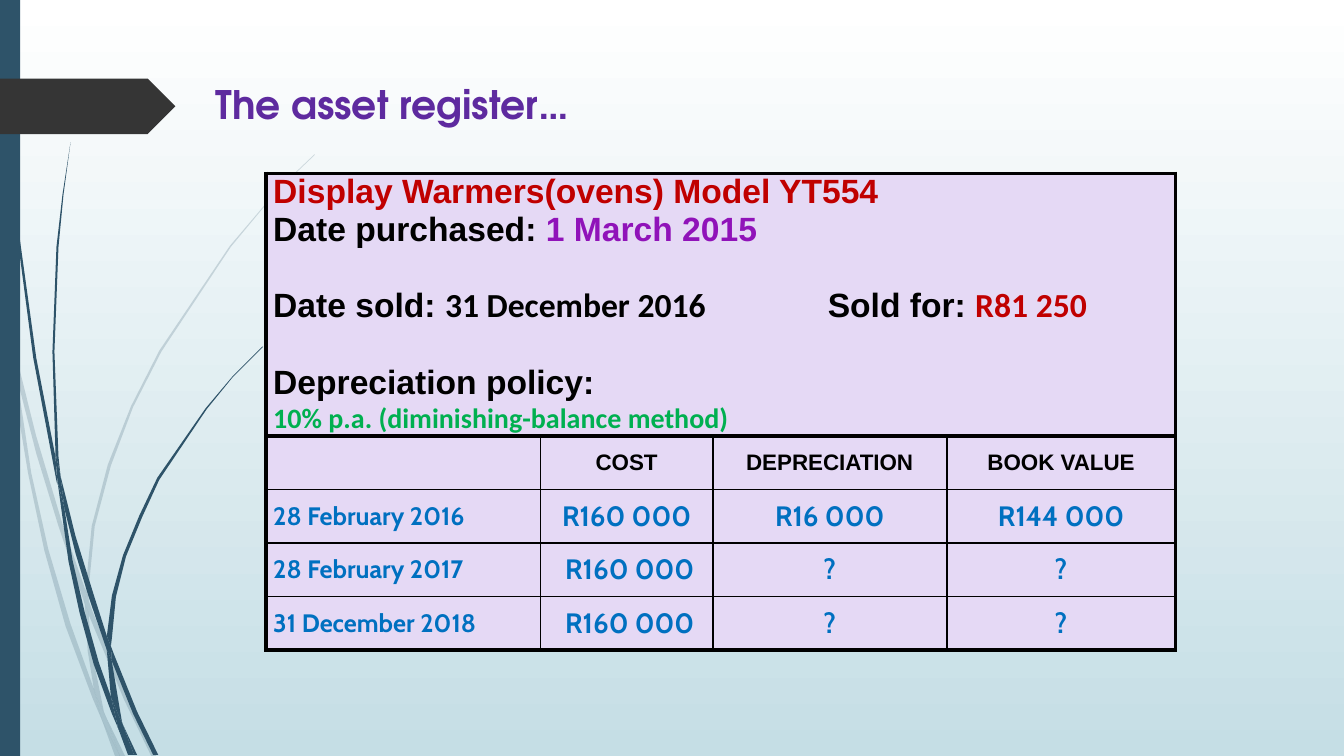
import lxml.etree
import pptx
import pptx.dml.color
import pptx.enum.shapes
import pptx.enum.text
import pptx.oxml.ns
import pptx.util

COLORS = {
    "navy": "2E5369", "charcoal": "353535", "sky": "C5DEE5", "white": "FFFFFF",
    "title": "5E2A9F", "lilac": "E5D9F5", "black": "000000", "red": "C00000",
    "purple": "9013B9", "green": "00B050", "blue": "0070C0",
}
RGB = {name: pptx.dml.color.RGBColor.from_string(value) for name, value in COLORS.items()}
ALIGN = pptx.enum.text.PP_ALIGN
SHAPE = pptx.enum.shapes.MSO_SHAPE

presentation = pptx.Presentation()
presentation.slide_width = pptx.util.Inches(13.33)
presentation.slide_height = pptx.util.Inches(7.5)
slide = presentation.slides.add_slide(presentation.slide_layouts[5])
# The slide is a grid of square units, 7.5 rows high
UNIT = presentation.slide_height / 7.5


def style_run(run, size, font, color):
    run.font.size = pptx.util.Pt(size)
    run.font.name = font
    run.font.bold = True
    run.font.color.rgb = RGB[color]


def paint(shape, color):
    shape.shadow.inherit = False
    shape.fill.solid()
    shape.fill.fore_color.rgb = RGB[color]
    shape.line.fill.background()


# Background
background = slide.background.fill
background.gradient()
background.gradient_angle = 270
for stop, color in zip(background.gradient_stops, ("white", "sky")):
    stop.color.rgb = RGB[color]

# Grass: outlines of the blade sections, as (column, row)
pale_blades = [
    [(0, 2.82), (.09, 3.22), (.11, 3.5), (.1, 3.44), (0, 2.99)],
    [(.58, 5.22), (.84, 5.99), (.85, 5.86), (.62, 5.2), (.36, 4.33), (.14, 3.45),
     (.17, 3.76), (.36, 4.5)],
    [(.92, 6.07), (.88, 5.96), (.88, 6.1), (1.23, 6.94), (1.5, 7.5), (1.55, 7.5), (1.27, 6.92)],
    [(1.19, 7.5), (1.24, 7.5), (1.05, 7.11)],
    [(.93, 6.83), (.7, 6.19), (.48, 5.45), (.31, 4.69), (.17, 3.76), (.11, 3.5), (.18, 4.1),
     (.28, 4.7), (.44, 5.46), (.65, 6.21), (.92, 6.93), (1.01, 7.14), (.99, 7.07)],
    [(.84, 5.99), (.87, 6.46), (.93, 6.83), (.96, 6.92), (1.05, 7.11), (1.03, 7.06),
     (.91, 6.46), (.88, 6.1), (.88, 6.08)],
    [(.88, 5.84), (.94, 5.22), (1.1, 4.62), (1.32, 4.04), (1.6, 3.49), (2.29, 2.45),
     (2.68, 1.98), (2.9, 1.75), (3.12, 1.54), (3.12, 1.53), (2.89, 1.75), (2.68, 1.97),
     (2.28, 2.44), (1.58, 3.48), (1.3, 4.03), (1.07, 4.61), (.91, 5.22), (.85, 5.84),
     (.85, 5.86), (.88, 5.96)],
    [(1.01, 7.14), (1.14, 7.5), (1.19, 7.5)],
    [(.88, 6.08), (.88, 6.1), (.88, 5.96), (.85, 5.86), (.84, 5.99)],
    [(.96, 6.92), (.93, 6.83), (.99, 7.07), (1.01, 7.14), (1.19, 7.5), (1.05, 7.11)],
]
dark_blades = [
    [(.07, 1.1), (.17, 2.33), (.33, 3.55), (.56, 4.77), (.57, 4.81), (.55, 4.53), (.36, 3.55),
     (.19, 2.32), (.08, 1.09), (.05, .48), (.04, 0), (.03, 0), (.04, .48)],
    [(.88, 5.92), (1.06, 6.45), (1.06, 6.31), (.93, 5.9), (.75, 5.32), (.6, 4.72),
     (.64, 5.05), (.75, 5.49)],
    [(1.13, 6.49), (1.1, 6.41), (1.11, 6.56), (1.32, 7.08), (1.52, 7.49), (1.57, 7.49),
     (1.36, 7.06)],
    [(1.1, 6.91), (.98, 6.57), (.84, 6.07), (.72, 5.56), (.64, 5.05), (.57, 4.77), (.68, 5.57),
     (.79, 6.08), (.93, 6.59), (1.11, 7.08), (1.17, 7.22), (1.16, 7.17)],
    [(.6, 4.72), (.58, 4.53), (.54, 3.49), (.58, 2.45), (.63, 1.93), (.7, 1.41), (.62, 1.93),
     (.56, 2.45), (.52, 3.49), (.55, 4.49)],
    [(1.33, 7.49), (1.36, 7.49), (1.22, 7.19)],
    [(.57, 4.77), (.64, 5.05), (.6, 4.72), (.55, 4.49), (.55, 4.53)],
    [(1.11, 6.33), (1.15, 5.92), (1.25, 5.52), (1.41, 5.13), (1.58, 4.76), (2.05, 4.06),
     (2.31, 3.74), (2.61, 3.44), (2.6, 3.44), (2.31, 3.73), (2.04, 4.05), (1.56, 4.74),
     (1.38, 5.12), (1.22, 5.51), (1.11, 5.91), (1.06, 6.31), (1.1, 6.41)],
    [(1.17, 7.22), (1.27, 7.49), (1.31, 7.49)],
    [(1.06, 6.45), (1.1, 6.91), (1.16, 7.06), (1.22, 7.19), (1.21, 7.16), (1.11, 6.56),
     (1.09, 6.51)],
    [(1.06, 6.45), (1.09, 6.51), (1.11, 6.56), (1.1, 6.41), (1.06, 6.31)],
    [(1.16, 7.06), (1.1, 6.91), (1.16, 7.17), (1.17, 7.22), (1.3, 7.49), (1.33, 7.49),
     (1.22, 7.19)],
]
for opacity, blades in [(20, pale_blades), (100, dark_blades)]:
    for outline in blades:
        points = [(x * UNIT, y * UNIT) for x, y in outline]
        builder = slide.shapes.build_freeform(*points[0])
        builder.add_line_segments(points[1:], close=True)
        blade = builder.convert_to_shape()
        paint(blade, "navy")
        if opacity < 100:
            fill_color = next(blade._element.spPr.iter(pptx.oxml.ns.qn("a:srgbClr")))
            alpha = lxml.etree.SubElement(fill_color, pptx.oxml.ns.qn("a:alpha"))
            alpha.set("val", str(opacity * 1000))

# Side bar and title tag
for preset, top, width, height, color in [
    (SHAPE.RECTANGLE, 0, .2, 7.5, "navy"),
    (SHAPE.PENTAGON, .78, 1.74, .55, "charcoal"),
]:
    shape = slide.shapes.add_shape(
        preset, 0, int(top * UNIT), int(width * UNIT), int(height * UNIT))
    paint(shape, color)

# Title
title = slide.shapes.title
title.left, title.top, title.width, title.height = [
    int(length * UNIT) for length in (2.04, .75, 3.84, .57)]
title.text_frame.text = "The asset register…"
title.text_frame.word_wrap = False
title.text_frame.auto_size = pptx.enum.text.MSO_AUTO_SIZE.NONE
title.text_frame.vertical_anchor = pptx.enum.text.MSO_ANCHOR.TOP
title.text_frame.paragraphs[0].alignment = ALIGN.LEFT
style_run(title.text_frame.paragraphs[0].runs[0], 28, "TeX Gyre Adventor", "title")

# Asset register table
column_widths = [2.72, 1.71, 2.32, 2.27]
row_heights = [2.55, .53, .53, .53, .53]
frame = slide.shapes.add_table(
    len(row_heights), len(column_widths), int(2.64 * UNIT), int(1.72 * UNIT),
    int(sum(column_widths) * UNIT), int(sum(row_heights) * UNIT))
table = frame.table
table.first_row = table.horz_banding = False
for column, width in zip(table.columns, column_widths):
    column.width = int(width * UNIT)
for row, height in zip(table.rows, row_heights):
    row.height = int(height * UNIT)

# Cell fills and borders: heavy outside and under the asset details
vertical_lines = [3, 1.5, 1.5, 1.5, 3]
horizontal_lines = [3, 3, 1.5, 1, 1, 3]
for r in range(len(row_heights)):
    for c in range(len(column_widths)):
        cell = table.cell(r, c)
        cell.fill.solid()
        cell.fill.fore_color.rgb = RGB["lilac"]
        cell.margin_left = cell.margin_right = int(.07 * UNIT)
        cell.margin_top = cell.margin_bottom = 0
        if r:
            cell.vertical_anchor = pptx.enum.text.MSO_ANCHOR.MIDDLE
        borders = {
            "lnL": 3 if r == 0 else vertical_lines[c],
            "lnR": 3 if r == 0 else vertical_lines[c + 1],
            "lnT": horizontal_lines[r],
            "lnB": horizontal_lines[r + 1],
        }
        for index, (side, points) in enumerate(borders.items()):
            line = pptx.oxml.parse_xml(
                f'<a:{side} {pptx.oxml.ns.nsdecls("a")} w="{int(pptx.util.Pt(points))}">'
                f'<a:solidFill><a:srgbClr val="{COLORS["black"]}"/></a:solidFill></a:{side}>')
            cell._tc.get_or_add_tcPr().insert(index, line)
table.cell(0, 0).merge(table.cell(0, len(column_widths) - 1))

# Asset details: space before in points, then runs of text, size, font, colour
details = [
    (0, [("Display Warmers(ovens) Model YT554", 24, "Arial", "red")]),
    (0, [("Date purchased: ", 24, "Arial", "black"), ("1 March 2015", 24, "Arial", "purple")]),
    (26.8, [("Date sold: ", 24, "Arial", "black"),
            ("31 December 2016\t", 24, "Calibri", "black"),
            ("Sold for: ", 24, "Arial", "black"), ("R81 250", 24, "Calibri", "red")]),
    (26.8, [("Depreciation policy:", 24, "Arial", "black")]),
    (0, [("10% p.a. (diminishing-balance method)", 20, "Calibri", "green")]),
]
text_frame = table.cell(0, 0).text_frame
for index, (space, runs) in enumerate(details):
    paragraph = text_frame.add_paragraph() if index else text_frame.paragraphs[0]
    paragraph.alignment = ALIGN.JUSTIFY
    paragraph.space_before = pptx.util.Pt(space)
    for text, size, font, color in runs:
        run = paragraph.add_run()
        run.text = text
        style_run(run, size, font, color)
    if len(runs) > 2:
        # Tab stop for the selling price
        tabs = lxml.etree.SubElement(
            paragraph._p.get_or_add_pPr(), pptx.oxml.ns.qn("a:tabLst"))
        tab = lxml.etree.SubElement(tabs, pptx.oxml.ns.qn("a:tab"))
        tab.set("pos", str(int(5.5 * UNIT)))
        tab.set("algn", "l")

# Yearly values
values = [
    ["", "COST", "DEPRECIATION", "BOOK VALUE"],
    ["28 February 2016", "R160 000", "R16 000", "R144 000"],
    ["28 February 2017", " R160 000", "?", "?"],
    ["31 December 2018", " R160 000", "?", "?"],
]
for r, row_values in enumerate(values, start=1):
    for c, text in enumerate(row_values):
        paragraph = table.cell(r, c).text_frame.paragraphs[0]
        paragraph.text = text
        paragraph.alignment = ALIGN.CENTER if c else ALIGN.JUSTIFY
        for run in paragraph.runs:
            if r == 1:
                style_run(run, 16, "Arial", "black")
            else:
                style_run(run, 20 if c else 18, "Cabin", "blue")

presentation.save("out.pptx")
